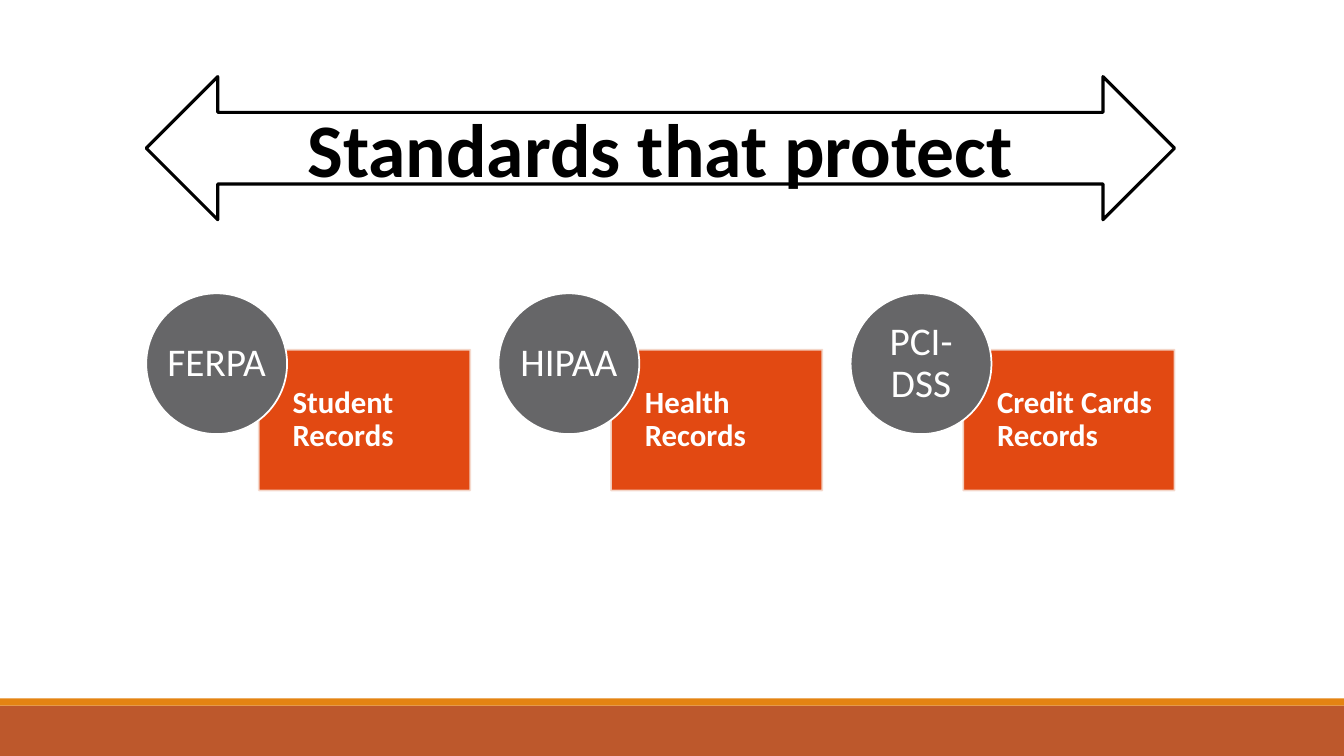
"""Build a slide that pairs three standards with the records they protect."""
from dataclasses import dataclass

import lxml.etree
import pptx
import pptx.dml.color
import pptx.enum.shapes
import pptx.enum.text
import pptx.oxml.ns
import pptx.util

RGB = pptx.dml.color.RGBColor
SHAPE = pptx.enum.shapes.MSO_SHAPE
ALIGN = pptx.enum.text.PP_ALIGN

WHITE = RGB(0xFF, 0xFF, 0xFF)
BLACK = RGB(0x00, 0x00, 0x00)
GREY = RGB(0x66, 0x66, 0x68)
ORANGE = RGB(0xE2, 0x49, 0x12)
PALE = RGB(0xF5, 0xD9, 0xCC)
RUST = RGB(0xBD, 0x58, 0x2C)
AMBER = RGB(0xE4, 0x83, 0x12)

FONT = "Calibri"
SLIDE_W, SLIDE_H = 13.33, 7.5
LEFT, CONTENT_W = 1.45, 10.2
UNIT = CONTENT_W / 73
TOP = 2.91
PITCH = 25
CIRCLE = 10
CARD_COL, CARD_ROW, CARD_W, CARD_H = 8, 4, 15, 10
CARD_INDENT = 2.4
CIRCLE_INSET = 1.46
PAD = 0.17


@dataclass(frozen=True)
class Box:
    left: float
    top: float
    width: float
    height: float

    def emu(self) -> list:
        return [pptx.util.Inches(v) for v in (self.left, self.top, self.width, self.height)]


@dataclass(frozen=True)
class Style:
    size: float
    color: RGB
    bold: bool
    align: ALIGN
    spacing: float = 1.0


@dataclass(frozen=True)
class Standard:
    name: str
    records: str


CARD_STYLE = Style(22, WHITE, True, ALIGN.LEFT, 0.9)
CIRCLE_STYLE = Style(28, WHITE, False, ALIGN.CENTER, 0.9)
TITLE_STYLE = Style(54, BLACK, True, ALIGN.CENTER)

STANDARDS = (
    Standard("FERPA", "Student Records"),
    Standard("HIPAA", "Health Records"),
    Standard("PCI-DSS", "Credit Cards Records"),
)


def cell(col: float, row: float, cols: float, rows: float) -> Box:
    return Box(LEFT + col * UNIT, TOP + row * UNIT, cols * UNIT, rows * UNIT)


def add_shape(s, kind: SHAPE, box: Box, fill: RGB, line: RGB | None = None, weight: float = 1.25):
    sp = s.shapes.add_shape(kind, *box.emu())
    sp.shadow.inherit = False
    sp.fill.solid()
    sp.fill.fore_color.rgb = fill
    if line is None:
        sp.line.fill.background()
    else:
        sp.line.color.rgb = line
        sp.line.width = pptx.util.Pt(weight)
    return sp


def set_line_alpha(sp, percent: int) -> None:
    ln = sp._element.find(".//" + pptx.oxml.ns.qn("a:ln"))
    color = ln.find(".//" + pptx.oxml.ns.qn("a:srgbClr"))
    lxml.etree.SubElement(color, pptx.oxml.ns.qn("a:alpha")).set("val", str(percent * 1000))


def add_text(s, box: Box, text: str, style: Style, insets: tuple, wrap: bool = True):
    sp = s.shapes.add_textbox(*box.emu())
    tf = sp.text_frame
    tf.word_wrap = wrap
    tf.vertical_anchor = pptx.enum.text.MSO_ANCHOR.MIDDLE
    tf.margin_left, tf.margin_top, tf.margin_right, tf.margin_bottom = (
        pptx.util.Inches(v) for v in insets)
    p = tf.paragraphs[0]
    p.alignment = style.align
    p.line_spacing = style.spacing
    r = p.add_run()
    r.text = text
    r.font.name = FONT
    r.font.size = pptx.util.Pt(style.size)
    r.font.bold = style.bold
    r.font.color.rgb = style.color
    return r


def outline_text(r, color: RGB, weight: float) -> None:
    ln = lxml.etree.Element(pptx.oxml.ns.qn("a:ln"), w=str(pptx.util.Pt(weight)))
    fill = lxml.etree.SubElement(ln, pptx.oxml.ns.qn("a:solidFill"))
    lxml.etree.SubElement(fill, pptx.oxml.ns.qn("a:srgbClr"), val=str(color))
    r.font._element.insert(0, ln)


def add_standard(s, index: int, standard: Standard) -> None:
    col = index * PITCH
    card_col = col + CARD_COL
    card = add_shape(s, SHAPE.RECTANGLE, cell(card_col, CARD_ROW, CARD_W, CARD_H), ORANGE, PALE)
    set_line_alpha(card, 90)
    label = cell(card_col + CARD_INDENT, CARD_ROW, CARD_W - CARD_INDENT, CARD_H)
    add_text(s, label, standard.records, CARD_STYLE, (0, PAD, PAD, PAD))
    add_shape(s, SHAPE.OVAL, cell(col, 0, CIRCLE, CIRCLE), GREY, WHITE)
    side = CIRCLE - 2 * CIRCLE_INSET
    name = cell(col + CIRCLE_INSET, CIRCLE_INSET, side, side)
    add_text(s, name, standard.name, CIRCLE_STYLE, (0, 0, 0, 0))


def add_title(s) -> None:
    add_shape(s, SHAPE.LEFT_RIGHT_ARROW, Box(LEFT, 0.76, CONTENT_W, 1.42), WHITE, BLACK, 2.25)
    r = add_text(s, Box(2.91, 0.96, 7.28, 1.01), "Standards that protect",
                 TITLE_STYLE, (0.1, 0.05, 0.1, 0.05), wrap=False)
    outline_text(r, WHITE, 0.75)


def main() -> None:
    prs = pptx.Presentation()
    prs.slide_width = pptx.util.Inches(SLIDE_W)
    prs.slide_height = pptx.util.Inches(SLIDE_H)
    s = prs.slides.add_slide(prs.slide_layouts[6])
    add_shape(s, SHAPE.RECTANGLE, Box(0, 7, SLIDE_W, 0.5), RUST)
    add_shape(s, SHAPE.RECTANGLE, Box(0, 6.93, SLIDE_W, 0.07), AMBER)
    for index, standard in enumerate(STANDARDS):
        add_standard(s, index, standard)
    add_title(s)
    prs.save("out.pptx")


if __name__ == "__main__":
    main()
